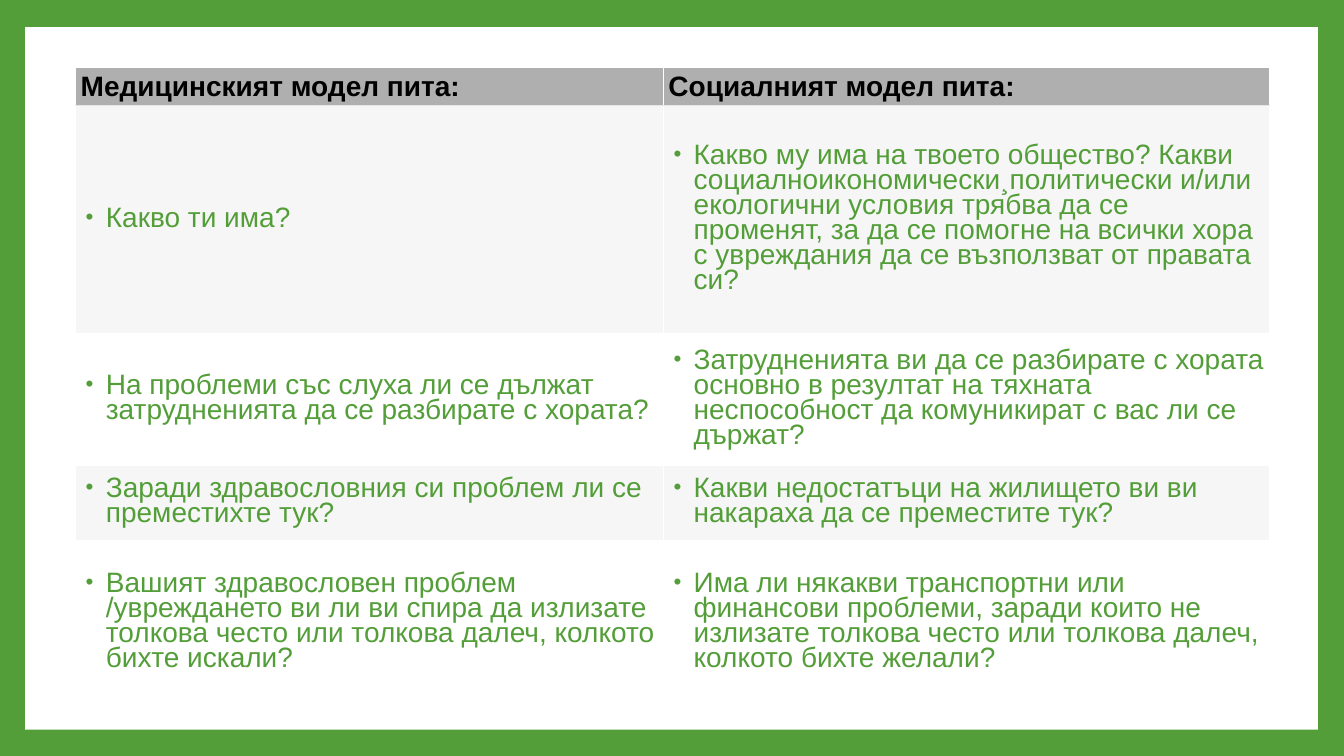
"""Build a slide comparing the questions of the medical and social models."""
from lxml.etree import SubElement
from pptx import Presentation
from pptx.dml.color import RGBColor
from pptx.enum.shapes import MSO_SHAPE
from pptx.enum.text import MSO_ANCHOR
from pptx.oxml import parse_xml
from pptx.oxml.ns import nsdecls, qn
from pptx.util import Inches, Pt

GREEN = RGBColor(0x54, 0x9E, 0x39)
WHITE = RGBColor(0xFF, 0xFF, 0xFF)
BLACK = RGBColor(0x00, 0x00, 0x00)
HEADER_GREY = RGBColor(0xAF, 0xAF, 0xAF)
BAND_GREY = RGBColor(0xF6, 0xF6, 0xF6)
RULE_GREY = RGBColor(0xE5, 0xE5, 0xE5)

COLUMN_WIDTHS = [5.83, 6.01]
ROW_HEIGHTS = [0.38, 2.26, 1.31, 0.74, 1.63]
QUESTIONS = [
    ("Медицинският модел пита:", "Социалният модел пита:"),
    ("Какво ти има?",
     "Какво му има на твоето общество? Какви социалноикономически¸политически "
     "и/или екологични условия трябва да се променят, за да се помогне на всички "
     "хора с увреждания да се възползват от правата си?"),
    ("На проблеми със слуха ли се дължат затрудненията да се разбирате с хората?",
     "Затрудненията ви да се разбирате с хората основно в резултат на тяхната "
     "неспособност да комуникират с вас ли се държат?"),
    ("Заради здравословния си проблем ли се преместихте тук?",
     "Какви недостатъци на жилището ви ви накараха да се преместите тук?"),
    ("Вашият здравословен проблем /увреждането ви ли ви спира да излизате "
     "толкова често или толкова далеч, колкото бихте искали?",
     "Има ли някакви транспортни или финансови проблеми, заради които не "
     "излизате толкова често или толкова далеч, колкото бихте желали?"),
]


def add_bullet(para):
    """Give a paragraph a hanging green bullet."""
    para.line_spacing = 0.8
    para.space_before = Pt(14)
    props = para._p.get_or_add_pPr()
    props.set("marL", str(Inches(0.25)))
    props.set("indent", str(Inches(-0.2)))
    colour = SubElement(props, qn("a:buClr"))
    SubElement(colour, qn("a:srgbClr"), val=str(GREEN))
    SubElement(props, qn("a:buSzPct"), val="80000")
    SubElement(props, qn("a:buFont"), typeface="Arial")
    SubElement(props, qn("a:buChar"), char="•")


def add_rule(cell, side):
    """Draw a thin grey border on one side of a cell."""
    cell._tc.get_or_add_tcPr().insert(0, parse_xml(
        f'<a:{side} {nsdecls("a")} w="{Pt(0.75)}"><a:solidFill>'
        f'<a:srgbClr val="{RULE_GREY}"/></a:solidFill></a:{side}>'))


deck = Presentation()
deck.slide_width, deck.slide_height = Inches(13.33), Inches(7.5)
page = deck.slides.add_slide(deck.slide_layouts[6])
page.background.fill.solid()
page.background.fill.fore_color.rgb = GREEN

panel = page.shapes.add_shape(
    MSO_SHAPE.RECTANGLE, Inches(0.25), Inches(0.27), Inches(12.82), Inches(6.97))
panel.shadow.inherit = False
panel.fill.solid()
panel.fill.fore_color.rgb = WHITE
panel.line.fill.background()

table = page.shapes.add_table(
    len(ROW_HEIGHTS), len(COLUMN_WIDTHS), Inches(0.75), Inches(0.67),
    Inches(sum(COLUMN_WIDTHS)), Inches(sum(ROW_HEIGHTS))).table
table.horz_banding = False
for column, width in zip(table.columns, COLUMN_WIDTHS):
    column.width = Inches(width)
for row, height in zip(table.rows, ROW_HEIGHTS):
    row.height = Inches(height)

for row_index, questions in enumerate(QUESTIONS):
    is_header = row_index == 0
    band = BAND_GREY if row_index % 2 else WHITE
    for column_index, question in enumerate(questions):
        cell = table.cell(row_index, column_index)
        cell.text = question
        cell.vertical_anchor = MSO_ANCHOR.MIDDLE
        cell.margin_left = cell.margin_right = Inches(0.05)
        cell.margin_top = cell.margin_bottom = Inches(0.02)
        cell.fill.solid()
        cell.fill.fore_color.rgb = HEADER_GREY if is_header else band
        para = cell.text_frame.paragraphs[0]
        if not is_header:
            add_bullet(para)
        para.font.name = "Arial"
        para.font.size = Pt(20)
        para.font.bold = is_header
        para.font.color.rgb = BLACK if is_header else GREEN
        if row_index < 2:
            add_rule(cell, "lnB" if is_header else "lnT")

deck.save("out.pptx")
